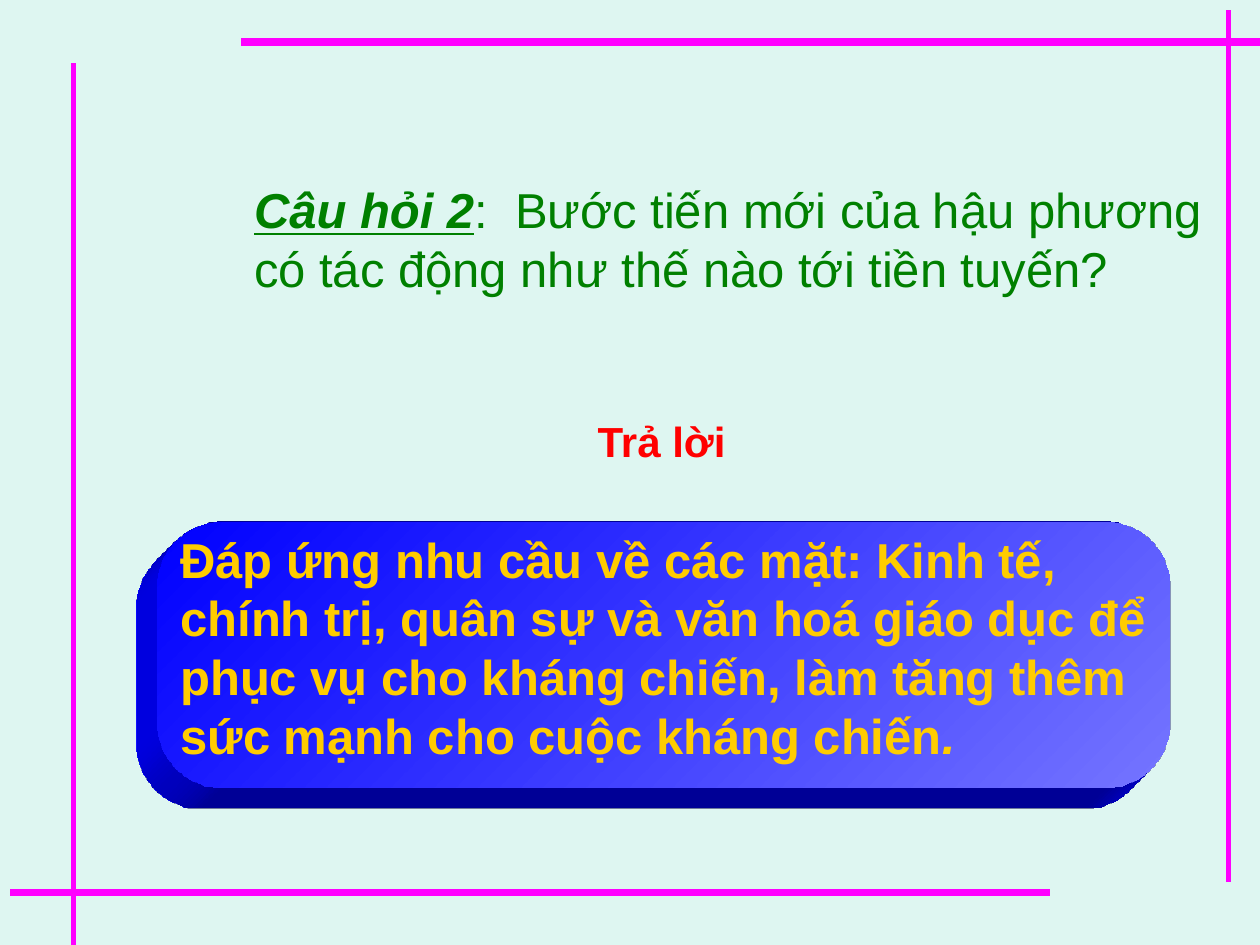
from typing import NamedTuple

from lxml.etree import SubElement
from pptx import Presentation
from pptx.dml.color import RGBColor
from pptx.enum.shapes import MSO_CONNECTOR as Connector, MSO_SHAPE as Preset
from pptx.enum.text import MSO_ANCHOR as Anchor, MSO_AUTO_SIZE as AutoSize, PP_ALIGN as Align
from pptx.oxml import parse_xml
from pptx.oxml.ns import nsdecls, qn
from pptx.util import Inches, Pt

WIDTH, HEIGHT = 10, 7.5
COLUMNS, ROWS = 120, 90  # grid of twelfths of an inch
COLORS = {
    "background": "DEF6F1",
    "frame": "FF00FF",
    "question": "008000",
    "heading": "FF0000",
    "answer": "FFCC00",
    "panel_start": "0000FF",
    "panel_end": "7575FF",
}


class Area(NamedTuple):
    column: float
    row: float
    columns: float
    rows: float


class FrameLine(NamedTuple):
    start: tuple[float, float]
    end: tuple[float, float]
    weight: float


class Piece(NamedTuple):
    text: str
    style: dict


FRAME = [
    FrameLine((7, 6), (7, ROWS), 3),
    FrameLine((23, 4), (COLUMNS, 4), 4.5),
    FrameLine((1, 85), (100, 85), 4.5),
    FrameLine((117, 1), (117, 84), 3),
]


def rgb(name: str) -> RGBColor:
    return RGBColor.from_string(COLORS[name])


def across(columns: float) -> int:
    return Inches(WIDTH * columns / COLUMNS)


def down(rows: float) -> int:
    return Inches(HEIGHT * rows / ROWS)


def box(area: Area) -> tuple[int, int, int, int]:
    return across(area.column), down(area.row), across(area.columns), down(area.rows)


def draw_frame_line(slide, frame_line: FrameLine) -> None:
    (x1, y1), (x2, y2) = frame_line.start, frame_line.end
    edge = slide.shapes.add_connector(
        Connector.STRAIGHT, across(x1), down(y1), across(x2), down(y2))
    edge.line.color.rgb = rgb("frame")
    edge.line.width = Pt(frame_line.weight)
    SubElement(edge._element.spPr, qn("a:effectLst"))


def write(holder, pieces: list[Piece], color: str, size: float, align=Align.LEFT) -> None:
    frame = holder.text_frame
    for name, value in {"word_wrap": True, "auto_size": AutoSize.NONE,
                        "vertical_anchor": Anchor.TOP}.items():
        setattr(frame, name, value)
    paragraph = frame.paragraphs[0]
    paragraph.alignment = align
    for piece in pieces:
        run = paragraph.add_run()
        run.text = piece.text
        run.font.color.rgb = rgb(color)
        for name, value in {"name": "Arial", "size": Pt(size), **piece.style}.items():
            setattr(run.font, name, value)


def draw_panel(slide, area: Area) -> None:
    """Draw a gradient rounded panel extruded towards the bottom left."""
    panel = slide.shapes.add_shape(Preset.ROUNDED_RECTANGLE, *box(area))
    panel.adjustments[0] = 0.24
    panel.fill.gradient()
    panel.fill.gradient_angle = 315
    for stop, position, color in zip(
            panel.fill.gradient_stops, (0, 1), ("panel_start", "panel_end")):
        stop.position = position
        stop.color.rgb = rgb(color)
    panel.line.fill.background()
    panel.shadow.inherit = False
    for depth_xml in (
        f'<a:scene3d {nsdecls("a")}><a:camera prst="legacyObliqueBottomLeft"/>'
        '<a:lightRig rig="legacyFlat3" dir="t"/></a:scene3d>',
        f'<a:sp3d {nsdecls("a")} extrusionH="430200" prstMaterial="legacyMatte">'
        f'<a:extrusionClr><a:srgbClr val="{COLORS["panel_start"]}"/></a:extrusionClr></a:sp3d>',
    ):
        panel._element.spPr.append(parse_xml(depth_xml))


def main() -> None:
    deck = Presentation()
    deck.slide_width, deck.slide_height = Inches(WIDTH), Inches(HEIGHT)
    slide = deck.slides.add_slide(deck.slide_layouts[5])
    slide.background.fill.solid()
    slide.background.fill.fore_color.rgb = rgb("background")

    for frame_line in FRAME:
        draw_frame_line(slide, frame_line)

    question = slide.shapes.title
    question.left, question.top, question.width, question.height = box(Area(23, 16.5, 93, 12.4))
    write(question, [
        Piece("Câu hỏi 2", {"bold": True, "italic": True, "underline": True}),
        Piece(":  Bước tiến mới của hậu phương có tác động như thế nào tới tiền tuyến?", {}),
    ], "question", 28)

    draw_panel(slide, Area(15, 49.7, 96.5, 25.3))

    heading = slide.shapes.add_textbox(*box(Area(52.5, 39, 21, 6)))
    write(heading, [Piece("Trả lời", {"bold": True})], "heading", 24, Align.CENTER)

    answer = slide.shapes.add_textbox(*box(Area(16, 49.8, 96, 29.3)))
    write(answer, [
        Piece("Đáp ứng nhu cầu về các mặt: Kinh tế, chính trị, quân sự và văn hoá giáo dục "
              "để phục vụ cho kháng chiến, làm tăng thêm sức mạnh cho cuộc kháng chiến",
              {"bold": True}),
        Piece(".", {"bold": True, "italic": True}),
    ], "answer", 28)

    deck.save("out.pptx")


if __name__ == "__main__":
    main()
